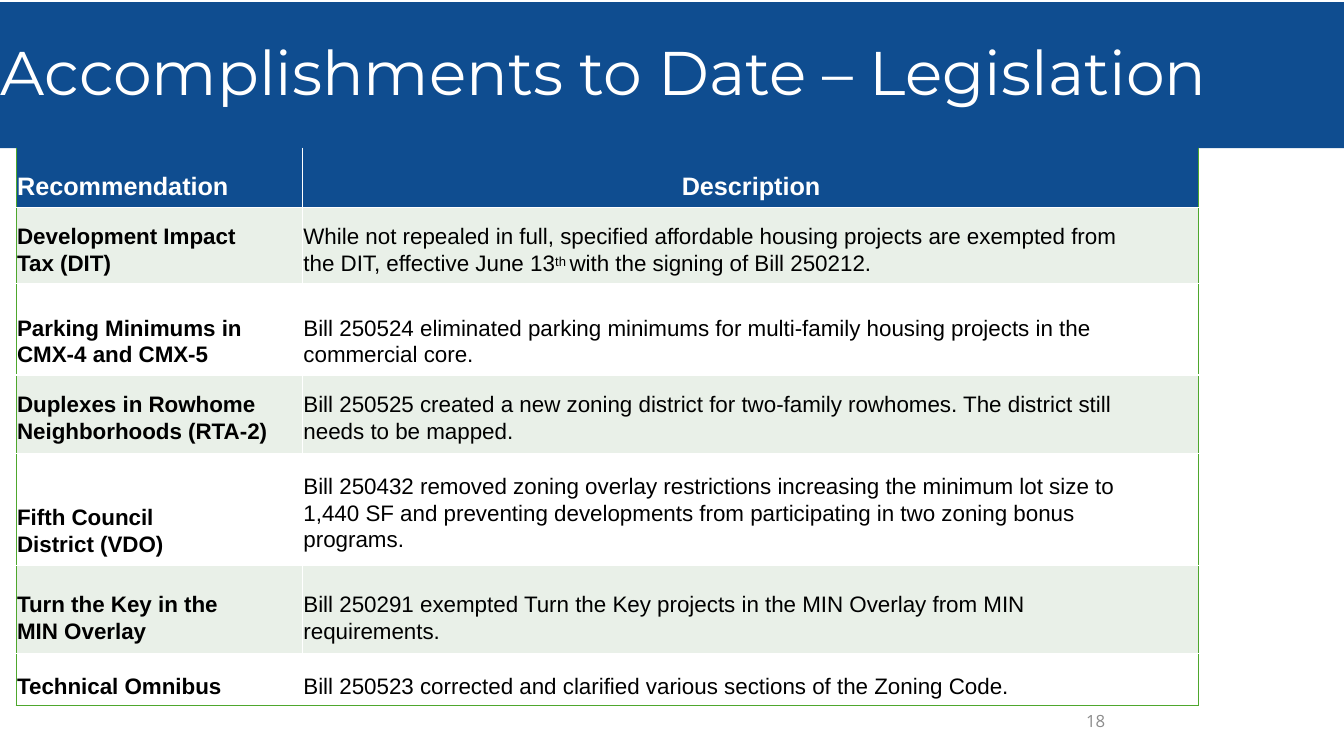
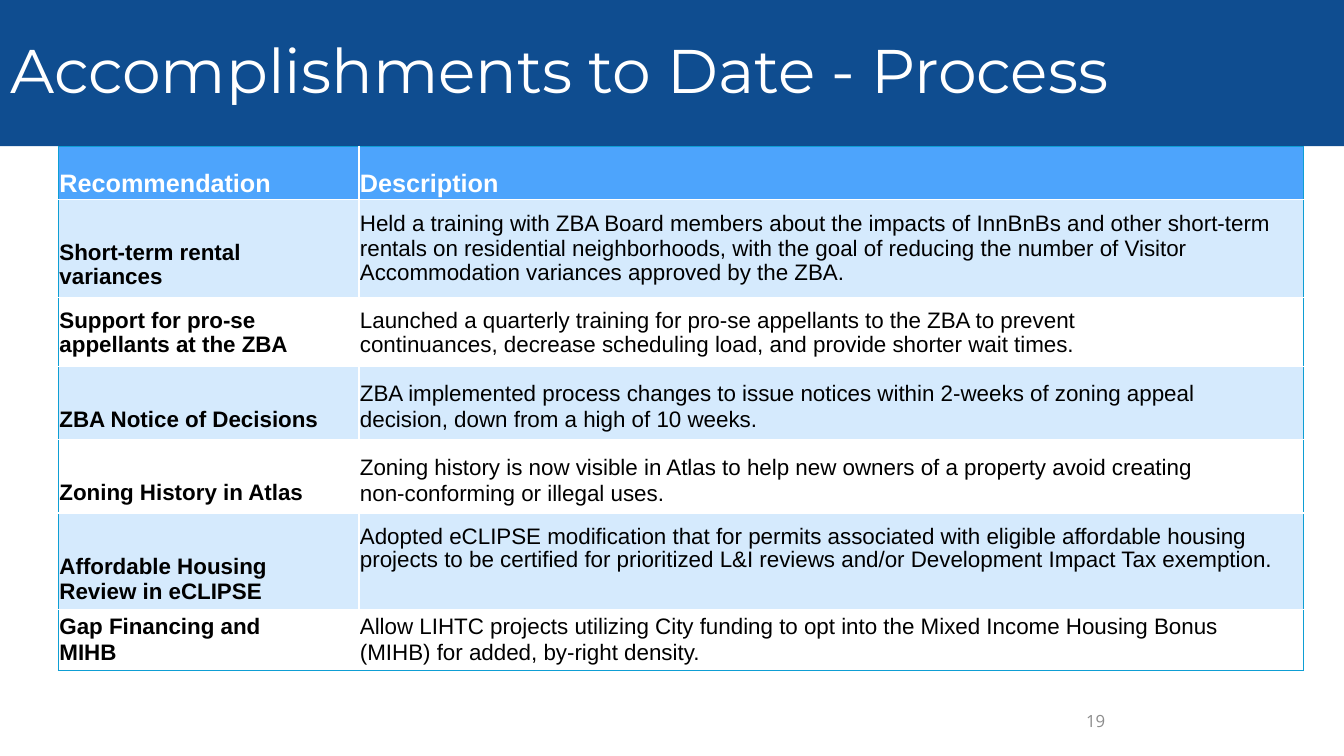
import collections

import pptx
import pptx.dml.color
import pptx.enum.text
import pptx.oxml
import pptx.oxml.ns
import pptx.util
from pptx.util import Inches

COLORS = {
    "band": "0F4D90", "white": "FFFFFF", "black": "000000", "number": "8C8C8C",
    "green_line": "4EA72D", "green_tint": "E9F0E8",
    "sky": "4DA4FC", "sky_line": "0E9ED4", "sky_tint": "D5EAFD",
}
LEFT = pptx.enum.text.PP_ALIGN.LEFT
CENTER = pptx.enum.text.PP_ALIGN.CENTER
RIGHT = pptx.enum.text.PP_ALIGN.RIGHT
MIDDLE = pptx.enum.text.MSO_ANCHOR.MIDDLE

TITLE_FONT = {"name": "Montserrat", "size": 44, "color": "white", "bold": False}
NUMBER_FONT = {"name": "Open Sans", "size": 12, "color": "number"}
HEADER_FONT = {"name": "Arial", "size": 18, "color": "white", "bold": True}
LABEL_FONT = {"name": "Arial", "size": 16, "color": "black", "bold": True}
BODY_FONT = {**LABEL_FONT, "bold": False}

Cell = collections.namedtuple("Cell", "text top right spacing", defaults=(0, 1.0))
Row = collections.namedtuple("Row", "height label description")
Theme = collections.namedtuple("Theme", "header tint outline top_line header_alignment")

GREEN = Theme("band", "green_tint", "green_line", "band", CENTER)
SKY = Theme("sky", "sky_tint", "sky_line", "sky_line", LEFT)

LEGISLATION = [
    Row(0.59, Cell("Recommendation", 0.24), Cell("Description", 0.24)),
    Row(0.75, Cell("Development Impact Tax (DIT)", 0.15, 0.5, 1.07),
        Cell("While not repealed in full, specified affordable housing projects are exempted "
             "from the DIT, effective June 13^th ^with the signing of Bill 250212.", 0.15, 0.7, 1.07)),
    Row(0.91, Cell("Parking Minimums in CMX-4 and CMX-5", 0.31, 0.5, 1.07),
        Cell("Bill 250524 eliminated parking minimums for multi-family housing projects in the "
             "commercial core.", 0.31, 0.7, 1.07)),
    Row(0.78, Cell("Duplexes in Rowhome Neighborhoods (RTA-2)", 0.16, 0.3, 1.07),
        Cell("Bill 250525 created a new zoning district for two-family rowhomes. The district "
             "still needs to be mapped.", 0.16, 0.7, 1.07)),
    Row(1.11, Cell("Fifth Council District (VDO)", 0.5, 1.3, 1.07),
        Cell("Bill 250432 removed zoning overlay restrictions increasing the minimum lot size "
             "to 1,440 SF and preventing developments from participating in two zoning bonus "
             "programs.", 0.19, 0.7, 1.07)),
    Row(0.87, Cell("Turn the Key in the MIN Overlay", 0.25, 0.5, 1.07),
        Cell("Bill 250291 exempted Turn the Key projects in the MIN Overlay from MIN "
             "requirements.", 0.25, 0.7, 1.07)),
    Row(0.52, Cell("Technical Omnibus", 0.21, 0.5),
        Cell("Bill 250523 corrected and clarified various sections of the Zoning Code.", 0.21, 0.7)),
]

PROCESS = [
    Row(0.51, Cell("Recommendation", 0.23), Cell("Description", 0.23)),
    Row(0.97, Cell("Short-term rental variances", 0.4, 0.6),
        Cell("Held a training with ZBA Board members about the impacts of InnBnBs and other "
             "short-term rentals on residential neighborhoods, with the goal of reducing the "
             "number of Visitor Accommodation variances approved by the ZBA.", 0.12, 0.2, 0.99)),
    Row(0.69, Cell("Support for pro-se appellants at the ZBA", 0.12, 0.6, 0.95),
        Cell("Launched a quarterly training for pro-se appellants to the ZBA to prevent "
             "continuances, decrease scheduling load, and provide shorter wait times.", 0.12, 1.2, 0.95)),
    Row(0.72, Cell("ZBA Notice of Decisions", 0.4, 0.2),
        Cell("ZBA implemented process changes to issue notices within 2-weeks of zoning appeal "
             "decision, down from a high of 10 weeks.", 0.14, 0.8, 1.03)),
    Row(0.73, Cell("Zoning History in Atlas", 0.41, 0.2),
        Cell("Zoning history is now visible in Atlas to help new owners of a property avoid "
             "creating non-conforming or illegal uses.", 0.15, 0.8, 1.03)),
    Row(0.96, Cell("Affordable Housing Review in eCLIPSE", 0.4, 0.6, 1.03),
        Cell("Adopted eCLIPSE modification that for permits associated with eligible affordable "
             "housing projects to be certified for prioritized L&I reviews and/or Development "
             "Impact Tax exemption.", 0.12, 0.2, 0.95)),
    Row(0.6, Cell("Gap Financing and MIHB", 0.04, 0.6, 1.03),
        Cell("Allow LIHTC projects utilizing City funding to opt into the Mixed Income Housing "
             "Bonus (MIHB) for added, by-right density.", 0.04, 0.8, 1.03)),
]


def rgb(name):
    return pptx.dml.color.RGBColor.from_string(COLORS[name])


def set_format(target, values):
    for name, value in values.items():
        setattr(target, name, value)


def set_font(font, values):
    values = dict(values)
    font.color.rgb = rgb(values.pop("color"))
    values["size"] = pptx.util.Pt(values["size"])
    set_format(font, values)


def write_text(text_frame, text, font, alignment=LEFT, spacing=1.0):
    paragraph = text_frame.paragraphs[0]
    set_format(paragraph, {"alignment": alignment, "line_spacing": spacing})
    for index, part in enumerate(text.split("^")):
        run = paragraph.add_run()
        run.text = part
        set_font(run.font, font)
        if index % 2:
            run.font._element.set("baseline", "21000")


def add_title(slide, text, top, left_margin):
    title = slide.shapes.title
    set_format(title, {"left": 0, "top": Inches(top),
                       "width": Inches(13.33), "height": Inches(1.45)})
    title.fill.solid()
    title.fill.fore_color.rgb = rgb("band")
    set_format(title.text_frame, {
        "margin_left": Inches(left_margin), "margin_right": 0, "word_wrap": True,
        "vertical_anchor": MIDDLE, "auto_size": pptx.enum.text.MSO_AUTO_SIZE.NONE})
    write_text(title.text_frame, text, TITLE_FONT, spacing=0.9)


def add_slide_number(slide, number):
    box = slide.shapes.add_textbox(Inches(10.55), Inches(6.95), Inches(0.51), Inches(0.4))
    set_format(box.text_frame, {"word_wrap": True, "vertical_anchor": MIDDLE})
    write_text(box.text_frame, str(number), NUMBER_FONT, RIGHT)


def set_borders(cell, borders):
    properties = cell._tc.get_or_add_tcPr()
    for side, color in zip("LRTB", borders):
        properties.append(pptx.oxml.parse_xml(
            f'<a:ln{side} {pptx.oxml.ns.nsdecls("a")} w="12700"><a:solidFill>'
            f'<a:srgbClr val="{COLORS[color]}"/></a:solidFill></a:ln{side}>'))


def fill_cell(cell, content, font, alignment, fill, borders):
    set_format(cell, {"margin_left": Inches(0.01), "margin_top": Inches(content.top),
                      "margin_right": Inches(content.right), "margin_bottom": 0})
    set_borders(cell, borders)
    cell.fill.solid()
    cell.fill.fore_color.rgb = rgb(fill)
    write_text(cell.text_frame, content.text, font, alignment, content.spacing)


def add_recommendations(slide, rows, theme, left, top, widths):
    height = sum(row.height for row in rows)
    table = slide.shapes.add_table(len(rows), len(widths), Inches(left), Inches(top),
                                   Inches(sum(widths)), Inches(height)).table
    set_format(table, {"first_row": False, "horz_banding": False})
    for column, width in zip(table.columns, widths):
        column.width = Inches(width)
    for index, row in enumerate(rows):
        table.rows[index].height = Inches(row.height)
        is_header = index == 0
        fill = theme.header if is_header else theme.tint if index % 2 else "white"
        top_line = theme.top_line if is_header else "white"
        bottom_line = theme.outline if index == len(rows) - 1 else "white"
        fonts = (HEADER_FONT, HEADER_FONT) if is_header else (LABEL_FONT, BODY_FONT)
        alignments = (LEFT, theme.header_alignment if is_header else LEFT)
        sides = ((theme.outline, "white"), ("white", theme.outline))
        contents = (row.label, row.description)
        for column, content in enumerate(contents):
            fill_cell(table.cell(index, column), content, fonts[column], alignments[column],
                      fill, (*sides[column], top_line, bottom_line))


def main():
    presentation = pptx.Presentation()
    set_format(presentation, {"slide_width": Inches(13.33), "slide_height": Inches(7.5)})
    title_only = presentation.slide_layouts.get_by_name("Title Only")

    legislation = presentation.slides.add_slide(title_only)
    add_title(legislation, "Accomplishments to Date – Legislation", 0.02, 0.01)
    add_slide_number(legislation, 18)
    add_recommendations(legislation, LEGISLATION, GREEN, 0.16, 1.47, (2.84, 8.89))

    process = presentation.slides.add_slide(title_only)
    add_title(process, "Accomplishments to Date - Process", 0, 0.1)
    add_slide_number(process, 19)
    add_recommendations(process, PROCESS, SKY, 0.58, 1.45, (2.98, 9.37))

    presentation.save("out.pptx")


if __name__ == "__main__":
    main()
